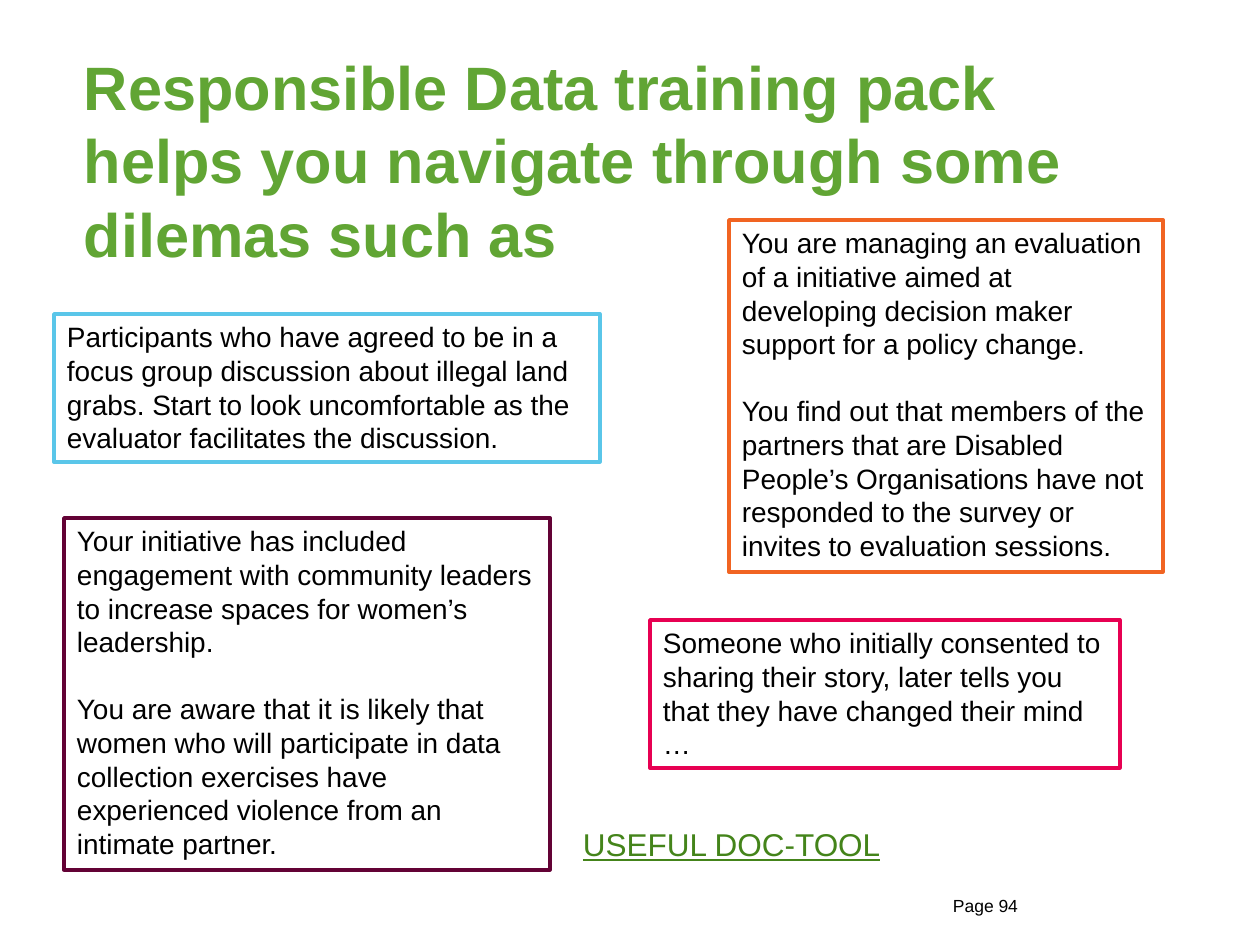
from pptx import Presentation
from pptx.dml.color import RGBColor
from pptx.enum.shapes import MSO_SHAPE
from pptx.enum.text import MSO_ANCHOR, MSO_AUTO_SIZE, PP_ALIGN
from pptx.util import Emu, Pt

RECT = MSO_SHAPE.RECTANGLE
TOP, LEFT, NO_FIT = MSO_ANCHOR.TOP, PP_ALIGN.LEFT, MSO_AUTO_SIZE.NONE

PX = 914400 // 126
FONT = "Arial"
LINE_SPACING = 1.0
INSET_X, INSET_Y = 13, 6
PARAGRAPH_GAP = 19.2  # points, one line of dilemma text

COLORS = {
    "title": "61A534", "text": "000000", "link": "44841A", "box": "FFFFFF",
    "blue": "5AC6E9", "orange": "F16422", "plum": "630235", "pink": "E70052",
}

# Content
TITLE = "Responsible Data training pack helps you navigate through some dilemas such as"
DILEMMAS = [  # border colour, (left, top, width, height) in px, paragraphs
    ("blue", (54, 314, 546, 148), [
        "Participants who have agreed to be in a focus group discussion about illegal "
        "land grabs. Start to look uncomfortable as the evaluator facilitates the "
        "discussion."]),
    ("orange", (729, 220, 434, 352), [
        "You are managing an evaluation of a initiative aimed at developing decision "
        "maker support for a policy change.",
        "You find out that members of the partners that are Disabled People’s "
        "Organisations have not responded to the survey or invites to evaluation "
        "sessions."]),
    ("plum", (64, 518, 486, 352), [
        "Your initiative has included engagement with community leaders to increase "
        "spaces for women’s leadership.",
        "You are aware that it is likely that women who will participate in data "
        "collection exercises have experienced violence from an intimate partner."]),
    ("pink", (650, 620, 470, 148), [
        "Someone who initially consented to sharing their story, later tells you that "
        "they have changed their mind …"]),
]
LINK = "USEFUL DOC-TOOL"
PAGE = "Page 94"


def px(*values):
    return [Emu(v * PX) for v in values]


def rgb(name):
    return RGBColor.from_string(COLORS[name])


def write(sp, paragraphs, size, color, inset_y=INSET_Y, bold=False, underline=False):
    tf = sp.text_frame
    tf.word_wrap = True
    tf.auto_size = NO_FIT
    tf.vertical_anchor = TOP
    tf.margin_left, tf.margin_right = px(INSET_X, INSET_X)
    tf.margin_top, tf.margin_bottom = px(inset_y, inset_y)
    for i, text in enumerate(paragraphs):
        p = tf.add_paragraph() if i else tf.paragraphs[0]
        p.text = text
        p.alignment = LEFT
        p.line_spacing = LINE_SPACING
        p.space_before = Pt(PARAGRAPH_GAP if i else 0)
        p.font.name, p.font.size = FONT, Pt(size)
        p.font.bold, p.font.underline = bold, underline
        p.font.color.rgb = rgb(color)


prs = Presentation()
prs.slide_width, prs.slide_height = px(1260, 945)
s = prs.slides.add_slide(prs.slide_layouts[5])

# Title
title = s.shapes.title
title.left, title.top, title.width, title.height = px(71, 43, 1108, 74)
write(title, [TITLE], 35, "title", bold=True)

# Dilemma boxes
for border, box, paragraphs in DILEMMAS:
    sp = s.shapes.add_shape(RECT, *px(*box))
    sp.shadow.inherit = False
    sp.fill.solid()
    sp.fill.fore_color.rgb = rgb("box")
    sp.line.color.rgb = rgb(border)
    sp.line.width = Pt(2)
    write(sp, paragraphs, 16, "text")

# Link text and page number
write(s.shapes.add_textbox(*px(570, 819, 630, 50)), [LINK], 18, "link", underline=True)
write(s.shapes.add_textbox(*px(940, 895, 169, 23)), [PAGE], 10, "text", inset_y=0)

prs.save("out.pptx")
